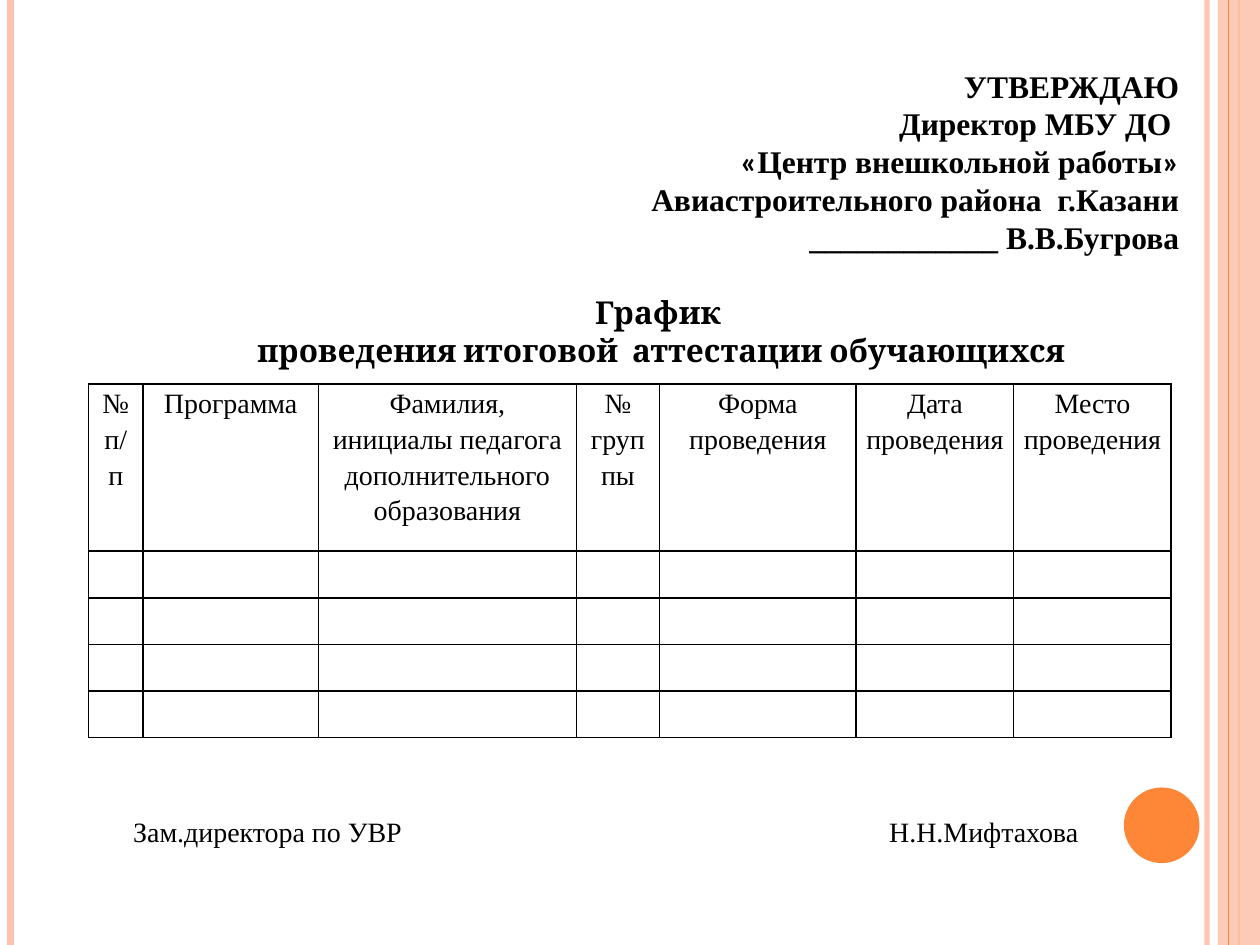
"""Build the schedule slide for the final assessment of students."""
from itertools import product

from lxml.etree import SubElement
from pptx import Presentation
from pptx.dml.color import RGBColor
from pptx.enum.shapes import MSO_CONNECTOR, MSO_SHAPE
from pptx.enum.text import MSO_ANCHOR, MSO_AUTO_SIZE, PP_ALIGN
from pptx.oxml.ns import qn
from pptx.util import Pt


def paint(color, value, opacity=100):
    color.rgb = RGBColor.from_string(value)
    if opacity < 100:
        element = color._xFill.find(qn("a:srgbClr"))
        SubElement(element, qn("a:alpha"), val=str(opacity * 1000))


def apply_format(target, values):
    for name, value in values.items():
        setattr(target, name, value)


BLACK, PEACH, ORANGE = "000000", "FEC3AE", "FE8637"
HEADING = {"size": Pt(18), "bold": True}
PLAIN = {"size": Pt(16), "bold": False, "name": "Times New Roman"}

presentation = Presentation()
apply_format(presentation, {"slide_width": Pt(720), "slide_height": Pt(540)})
slide = presentation.slides.add_slide(presentation.slide_layouts[5])
shapes = slide.shapes
title = shapes.title

stripes = [
    ("line", 689.8, 3, PEACH, 93),
    ("line", 6, 4.5, PEACH, 100),
    ("line", 708, 1.5, ORANGE, 100),
    ("band", 696, 24, PEACH, 87),
    ("line", 702, 0.75, ORANGE, 100),
]
for kind, left, width, color, opacity in stripes:
    if kind == "line":
        line = shapes.add_connector(MSO_CONNECTOR.STRAIGHT, Pt(left), 0, Pt(left), Pt(540))
        line.line.width = Pt(width)
        line.line.fill.solid()
        paint(line.line.fill.fore_color, color, opacity)
        SubElement(line._element.spPr, qn("a:effectLst"))
    else:
        band = shapes.add_shape(MSO_SHAPE.RECTANGLE, Pt(left), 0, Pt(width), Pt(540))
        band.shadow.inherit = False
        band.fill.solid()
        paint(band.fill.fore_color, color, opacity)
        band.line.fill.background()

circle = shapes.add_shape(MSO_SHAPE.OVAL, Pt(642.25), Pt(450), Pt(43.2), Pt(43.2))
circle.shadow.inherit = False
circle.fill.solid()
paint(circle.fill.fore_color, ORANGE)
circle.line.fill.background()

headers = [
    "№ п/п",
    "Программа",
    "Фамилия, инициалы педагога дополнительного образования",
    "№ группы",
    "Форма проведения",
    "Дата проведения",
    "Место проведения",
]
column_widths = [31.3, 100.1, 147.5, 47.4, 112.5, 90, 90]
row_heights = [95.6] + [26.65] * 4
table = shapes.add_table(
    len(row_heights), len(headers), Pt(50.5), Pt(219.4),
    Pt(sum(column_widths)), Pt(sum(row_heights)),
).table
for column, width in zip(table.columns, column_widths):
    column.width = Pt(width)
for row, height in zip(table.rows, row_heights):
    row.height = Pt(height)

for row_index, column_index in product(range(len(row_heights)), range(len(headers))):
    cell = table.cell(row_index, column_index)
    apply_format(cell, {"margin_left": Pt(5), "margin_right": Pt(5),
                        "margin_top": 0, "margin_bottom": 0})
    properties = cell._tc.get_or_add_tcPr()
    for side in ("lnL", "lnR", "lnT", "lnB"):
        border = SubElement(properties, qn(f"a:{side}"), w=str(Pt(1)))
        border_fill = SubElement(border, qn("a:solidFill"))
        SubElement(border_fill, qn("a:srgbClr"), val=BLACK)
    cell.fill.background()
    paragraph = cell.text_frame.paragraphs[0]
    if row_index == 0:
        paragraph.text = headers[column_index]
    apply_format(paragraph, {"alignment": PP_ALIGN.CENTER, "line_spacing": 1.15})
    apply_format(paragraph.font, PLAIN)
    paint(paragraph.font.color, BLACK)

apply_format(title, {"left": Pt(39.6), "top": Pt(33.8), "width": Pt(641.5), "height": Pt(181.4)})
apply_format(title.text_frame, {"word_wrap": True, "auto_size": MSO_AUTO_SIZE.NONE,
                                "vertical_anchor": MSO_ANCHOR.MIDDLE})
title_lines = [
    (PP_ALIGN.RIGHT, 0, [("УТВЕРЖДАЮ", "Times New Roman")]),
    (PP_ALIGN.RIGHT, 0, [("Директор МБУ ДО ", "Times New Roman")]),
    (PP_ALIGN.RIGHT, 0, [("«", "Calibri"), ("Центр внешкольной работы", "Times New Roman"),
                         ("»", "Calibri")]),
    (PP_ALIGN.RIGHT, 0, [("Авиастроительного района  г.Казани", "Times New Roman")]),
    (PP_ALIGN.RIGHT, 0, [("____________ В.В.Бугрова", "Times New Roman")]),
    (PP_ALIGN.CENTER, 21.6, [("График ", "Cambria")]),
    (PP_ALIGN.CENTER, 0, [("проведения итоговой  аттестации обучающихся", "Cambria")]),
]
for index, (alignment, gap, pieces) in enumerate(title_lines):
    frame = title.text_frame
    paragraph = frame.add_paragraph() if index else frame.paragraphs[0]
    apply_format(paragraph, {"alignment": alignment, "space_before": Pt(gap)})
    paragraph._p.get_or_add_pPr().set("indent", str(Pt(35.3)))
    for text, font_name in pieces:
        run = paragraph.add_run()
        run.text = text
        apply_format(run.font, HEADING | {"name": font_name})
        paint(run.font.color, BLACK)

signature = shapes.add_textbox(Pt(56.2), Pt(461.5), Pt(579.6), Pt(26.6))
apply_format(signature.text_frame, {"word_wrap": True, "margin_left": Pt(19.9),
                                    "vertical_anchor": MSO_ANCHOR.MIDDLE})
paragraph = signature.text_frame.paragraphs[0]
paragraph.text = "Зам.директора по УВР\tН.Н.Мифтахова"
paragraph.alignment = PP_ALIGN.LEFT
tab_list = SubElement(paragraph._p.get_or_add_pPr(), qn("a:tabLst"))
SubElement(tab_list, qn("a:tab"), pos=str(Pt(432)), algn="l")
apply_format(paragraph.font, PLAIN)
paint(paragraph.font.color, BLACK)

presentation.save("out.pptx")
